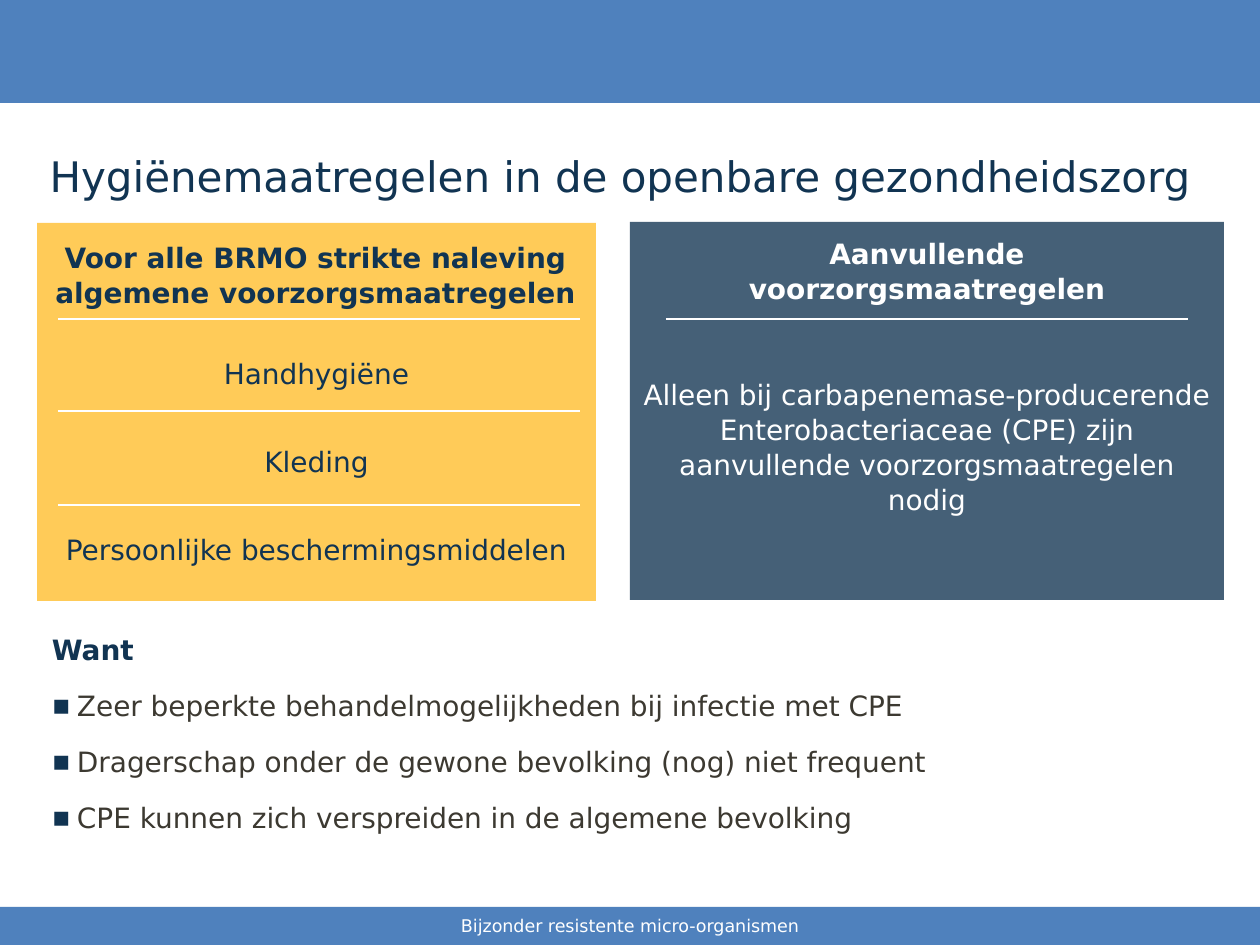
"""Builds a slide on hygiene measures in public health care."""
from lxml.etree import SubElement
from pptx import Presentation
from pptx.dml.color import RGBColor
from pptx.enum.shapes import MSO_CONNECTOR, MSO_SHAPE
from pptx.enum.text import MSO_ANCHOR, MSO_AUTO_SIZE, PP_ALIGN
from pptx.oxml.ns import qn
from pptx.util import Pt

FONT = "DejaVu Sans"
BLUE = RGBColor(0x4F, 0x81, 0xBD)
NAVY = RGBColor(0x11, 0x34, 0x52)
YELLOW = RGBColor(0xFF, 0xB6, 0x12)
BROWN = RGBColor(0x3C, 0x39, 0x31)
WHITE = RGBColor(0xFF, 0xFF, 0xFF)

TITLE = "Hygiënemaatregelen in de openbare gezondheidszorg"
FOOTER = "Bijzonder resistente micro-organismen"
REASON_HEAD = "Want"
REASONS = [
    "Zeer beperkte behandelmogelijkheden bij infectie met CPE",
    "Dragerschap onder de gewone bevolking (nog) niet frequent",
    "CPE kunnen zich verspreiden in de algemene bevolking",
]
PANELS = [
    dict(
        box=(37, 223, 559, 378), fill=YELLOW, alpha=70, color=NAVY,
        head=["Voor alle BRMO strikte naleving algemene voorzorgsmaatregelen"],
        head_box=(34, 233, 563, 83),
        items=["Handhygiëne", "Kleding", "Persoonlijke beschermingsmiddelen"],
        spacing=2.0, top=71, rule_x=(58, 580), rules=[319, 411, 505],
    ),
    dict(
        box=(630, 222, 594, 378), fill=NAVY, alpha=78, color=WHITE,
        head=["Aanvullende", "voorzorgsmaatregelen"],
        head_box=(630, 229, 594, 81),
        items=["Alleen bij carbapenemase-producerende Enterobacteriaceae (CPE) "
               "zijn aanvullende voorzorgsmaatregelen nodig"],
        spacing=Pt(20), top=76, rule_x=(666, 1188), rules=[319],
    ),
]


def px(n):
    return round(n * 914400 / 126)


def place(sp, box):
    sp.left, sp.top, sp.width, sp.height = map(px, box)


def add_run(p, text, size, color, bold=False):
    r = p.add_run()
    r.text = text
    r.font.name, r.font.size, r.font.bold = FONT, Pt(size), bold
    r.font.color.rgb = color


def add_paragraph(tf, first, spacing=Pt(20), align=PP_ALIGN.CENTER):
    p = tf.paragraphs[0] if first else tf.add_paragraph()
    p.alignment, p.line_spacing = align, spacing
    p.space_before, p.space_after = Pt(0 if first else 6), Pt(6)
    return p


def set_bullet(p, char=None, indent=0):
    pPr = p._p.get_or_add_pPr()
    pPr.set("marL", str(px(indent)))
    pPr.set("indent", str(-px(indent)))
    if char is None:
        SubElement(pPr, qn("a:buNone"))
        return
    color = SubElement(pPr, qn("a:buClr"))
    SubElement(color, qn("a:srgbClr")).set("val", str(NAVY))
    SubElement(pPr, qn("a:buFont")).set("typeface", FONT)
    SubElement(pPr, qn("a:buChar")).set("char", char)


def add_rect(shapes, box, color, alpha=100):
    sp = shapes.add_shape(MSO_SHAPE.RECTANGLE, *map(px, box))
    sp.shadow.inherit = False
    sp.fill.solid()
    sp.fill.fore_color.rgb = color
    sp.line.fill.background()
    if alpha < 100:
        clr = sp._element.spPr.find(qn("a:solidFill"))[0]
        SubElement(clr, qn("a:alpha")).set("val", str(alpha * 1000))
    sp.text_frame.word_wrap = True
    sp.text_frame.vertical_anchor = MSO_ANCHOR.MIDDLE
    return sp


def add_rule(shapes, x1, x2, y):
    line = shapes.add_connector(MSO_CONNECTOR.STRAIGHT, px(x1), px(y), px(x2), px(y))
    line.line.color.rgb, line.line.width = WHITE, Pt(0.75)
    SubElement(line._element.spPr, qn("a:effectLst"))


def add_panel(slide, panel):
    shapes = slide.shapes.add_group_shape().shapes
    tf = add_rect(shapes, panel["box"], panel["fill"], panel["alpha"]).text_frame
    tf.margin_top = px(panel["top"])
    for i, item in enumerate(panel["items"]):
        add_run(add_paragraph(tf, i == 0, panel["spacing"]), item, 16, panel["color"])

    tf = shapes.add_textbox(*map(px, panel["head_box"])).text_frame
    tf.word_wrap = True
    p = add_paragraph(tf, True)
    for i, text in enumerate(panel["head"]):
        if i:
            p.add_line_break()
        add_run(p, text, 16, panel["color"], True)

    for y in panel["rules"]:
        add_rule(shapes, *panel["rule_x"], y)


def main():
    prs = Presentation()
    prs.slide_width, prs.slide_height = px(1260), px(945)
    slide = prs.slides.add_slide(prs.slide_layouts[1])
    title, body = slide.placeholders

    place(title, (37, 125, 1200, 101))
    tf = title.text_frame
    tf.auto_size, tf.vertical_anchor = MSO_AUTO_SIZE.NONE, MSO_ANCHOR.MIDDLE
    tf.paragraphs[0].alignment = PP_ALIGN.LEFT
    add_run(tf.paragraphs[0], TITLE, 24, NAVY)

    place(body, (37, 621, 1168, 248))
    tf = body.text_frame
    tf.auto_size = MSO_AUTO_SIZE.NONE
    tf.margin_left = tf.margin_right = px(15)
    tf.margin_top = tf.margin_bottom = px(10)
    p = add_paragraph(tf, True, align=PP_ALIGN.LEFT)
    set_bullet(p)
    add_run(p, REASON_HEAD, 16, NAVY, True)
    for reason in REASONS:
        p = add_paragraph(tf, False, align=PP_ALIGN.LEFT)
        p.level = 1
        set_bullet(p, "▪", 25)
        add_run(p, reason, 16, BROWN)

    add_rect(slide.shapes, (0, 0, 1260, 103), BLUE)
    p = add_rect(slide.shapes, (0, 907, 1260, 38), BLUE).text_frame.paragraphs[0]
    p.alignment = PP_ALIGN.CENTER
    add_run(p, FOOTER, 10, WHITE)

    for panel in PANELS:
        add_panel(slide, panel)
    prs.save("out.pptx")


if __name__ == "__main__":
    main()
